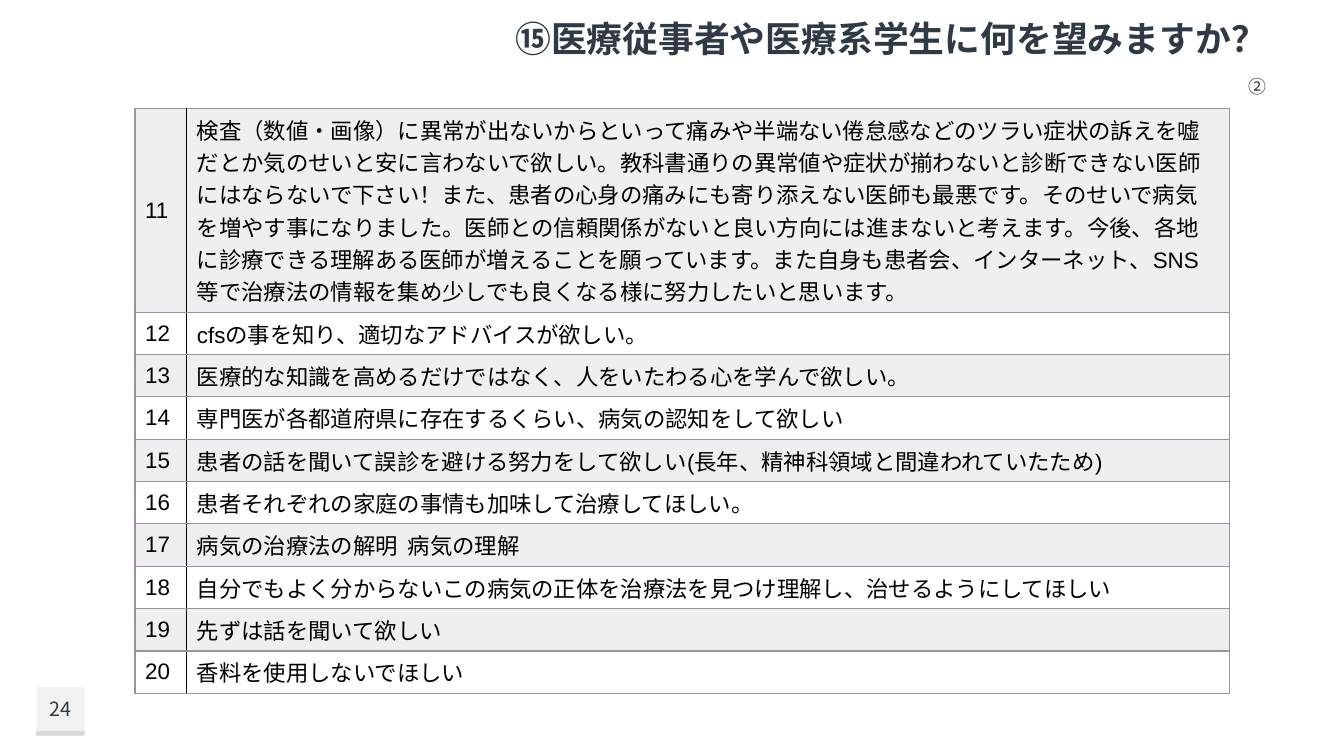
from lxml.etree import SubElement
from pptx import Presentation
from pptx.dml.color import RGBColor
from pptx.enum.shapes import MSO_SHAPE
from pptx.enum.text import MSO_ANCHOR, PP_ALIGN
from pptx.oxml.ns import qn
from pptx.util import Pt

CJK = "Noto Sans CJK JP"
INK, BLACK, BORDER = "2F3A46", "000000", "9D90A0"
BANDS = ("EFEEF0", "FFFFFF")
FIRST_NUMBER = 11
ANSWERS = [
    "検査（数値・画像）に異常が出ないからといって痛みや半端ない倦怠感などのツラい症状の訴えを嘘だ"
    "とか気のせいと安に言わないで欲しい。教科書通りの異常値や症状が揃わないと診断できない医師に"
    "はならないで下さい！また、患者の心身の痛みにも寄り添えない医師も最悪です。そのせいで病気を"
    "増やす事になりました。医師との信頼関係がないと良い方向には進まないと考えます。今後、各地に"
    "診療できる理解ある医師が増えることを願っています。また自身も患者会、インターネット、SNS等"
    "で治療法の情報を集め少しでも良くなる様に努力したいと思います。",
    "cfsの事を知り、適切なアドバイスが欲しい。",
    "医療的な知識を高めるだけではなく、人をいたわる心を学んで欲しい。",
    "専門医が各都道府県に存在するくらい、病気の認知をして欲しい",
    "患者の話を聞いて誤診を避ける努力をして欲しい(長年、精神科領域と間違われていたため)",
    "患者それぞれの家庭の事情も加味して治療してほしい。",
    "病気の治療法の解明  病気の理解",
    "自分でもよく分からないこの病気の正体を治療法を見つけ理解し、治せるようにしてほしい",
    "先ずは話を聞いて欲しい",
    "香料を使用しないでほしい",
]


def rgb(color):
    return RGBColor.from_string(color)


def write(tf, text, align, color=INK, small_caps=False, **font):
    p = tf.paragraphs[0]
    p.alignment = align
    r = p.add_run()
    r.text = text
    for name, value in font.items():
        setattr(r.font, name, value)
    r.font.color.rgb = rgb(color)
    rPr = r._r.get_or_add_rPr()
    SubElement(rPr, qn("a:ea"), typeface=CJK)
    if small_caps:
        rPr.set("cap", "small")


def add_title(s, text, left, top, width, height):
    sp = s.shapes.title
    box = {"left": left, "top": top, "width": width, "height": height}
    for name, value in box.items():
        setattr(sp, name, Pt(value))
    sp.text_frame.vertical_anchor = MSO_ANCHOR.MIDDLE
    write(sp.text_frame, text, PP_ALIGN.RIGHT, small_caps=True,
          size=Pt(32), name=CJK, bold=True)


def add_text(s, text, left, top, width, height, align, **font):
    tf = s.shapes.add_textbox(Pt(left), Pt(top), Pt(width), Pt(height)).text_frame
    tf.word_wrap = True
    tf.vertical_anchor = MSO_ANCHOR.MIDDLE
    write(tf, text, align, name=CJK, **font)


def add_block(s, left, top, width, height, color):
    sp = s.shapes.add_shape(MSO_SHAPE.RECTANGLE, Pt(left), Pt(top), Pt(width), Pt(height))
    sp.shadow.inherit = False
    sp.fill.solid()
    sp.fill.fore_color.rgb = rgb(color)
    sp.line.fill.background()


def set_borders(cell, **colors):
    tcPr = cell._tc.get_or_add_tcPr()
    for side in "LRTB":
        ln = SubElement(tcPr, qn(f"a:ln{side}"), w=str(Pt(1)))
        fill = SubElement(ln, qn("a:solidFill"))
        SubElement(fill, qn("a:srgbClr"), val=colors.get(side, BORDER))


def add_answers(s, left, top, widths, heights):
    frame = s.shapes.add_table(len(ANSWERS), 2, Pt(left), Pt(top),
                               Pt(sum(widths)), Pt(sum(heights)))
    table = frame.table
    for column, width in zip(table.columns, widths):
        column.width = Pt(width)
    for i, (row, height, answer) in enumerate(zip(table.rows, heights, ANSWERS)):
        row.height = Pt(height)
        number_cell, answer_cell = row.cells
        set_borders(number_cell, R=BLACK)
        set_borders(answer_cell, L=BLACK)
        number_cell.vertical_anchor = MSO_ANCHOR.MIDDLE
        for cell, text in zip(row.cells, (str(FIRST_NUMBER + i), answer)):
            cell.fill.solid()
            cell.fill.fore_color.rgb = rgb(BANDS[i % 2])
            write(cell.text_frame, text, PP_ALIGN.LEFT, BLACK, size=Pt(16), name="Arial")


def main():
    prs = Presentation()
    prs.slide_width, prs.slide_height = Pt(960), Pt(540)
    s = prs.slides.add_slide(prs.slide_layouts[5])
    add_block(s, 26, 491, 34.5, 34.5, "F2F2F2")
    add_block(s, 26, 522, 34.5, 3.5, "D9D9D9")
    add_title(s, "⑮医療従事者や医療系学生に何を望みますか？", 157, 0, 755, 49)
    add_text(s, "②", 157, 49, 755, 22.5, PP_ALIGN.RIGHT, size=Pt(16), small_caps=True)
    add_text(s, "24", 21, 491, 45, 31, PP_ALIGN.CENTER, size=Pt(14))
    add_answers(s, 96.5, 77.5, (37, 745), [145.5] + [30.25] * (len(ANSWERS) - 1))
    prs.save("out.pptx")


if __name__ == "__main__":
    main()
